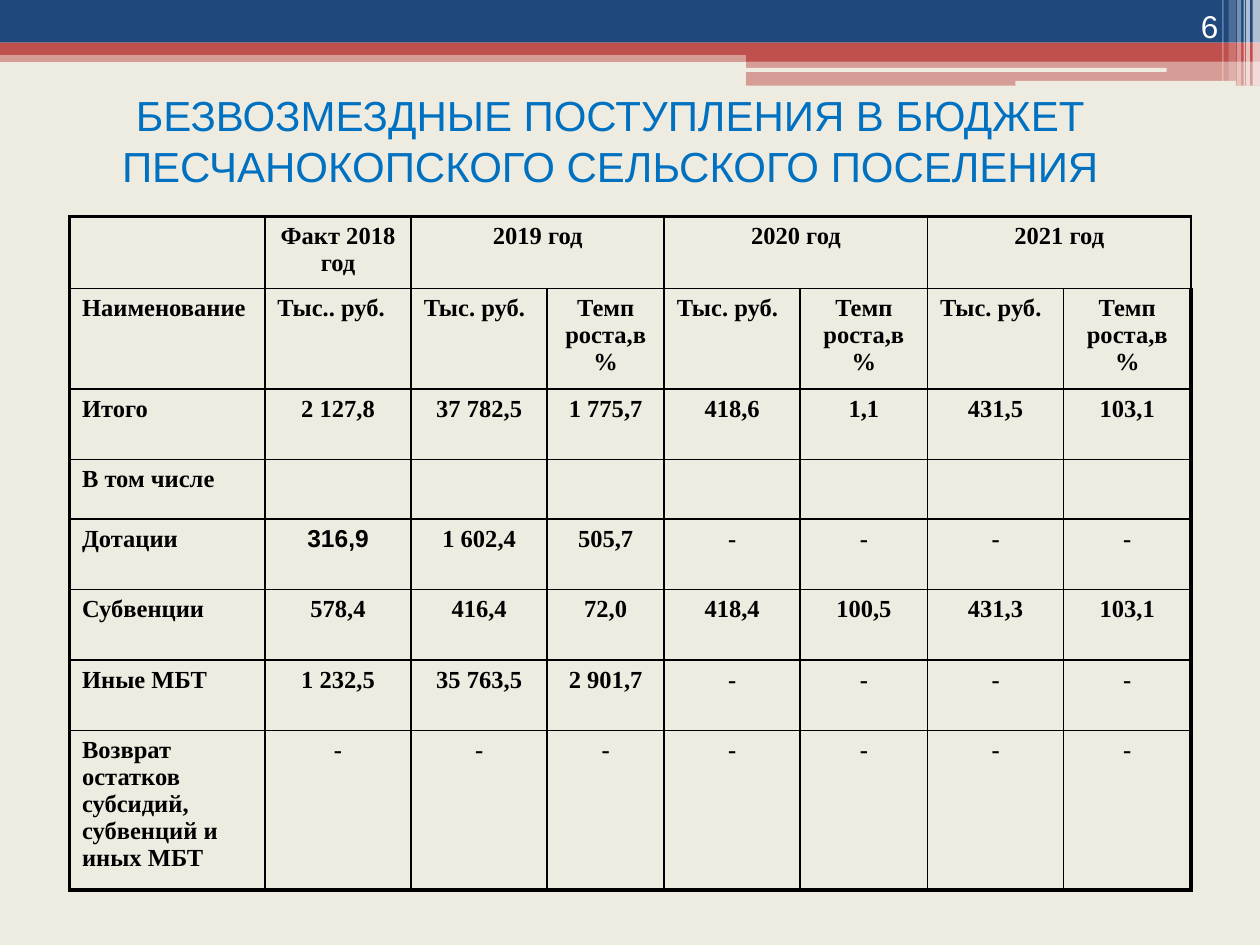
import pptx
import pptx.util
import pptx.dml.color
import pptx.enum.shapes
import pptx.enum.text
import pptx.oxml
import pptx.oxml.ns

Cm = pptx.util.Cm
Align = pptx.enum.text.PP_ALIGN
Anchor = pptx.enum.text.MSO_ANCHOR
Kind = pptx.enum.shapes.MSO_SHAPE

PAPER, NAVY, RED, WHITE, BLACK = "EEECE1", "1F497D", "C0504D", "FFFFFF", "000000"
THIN, THICK = 1, 2.25

BARS = [
    (0, 1.02, 25.4, 0.23, RED, 50),
    (0, 0, 25.4, 0.86, NAVY, 100),
    (0, 0.86, 25.4, 0.25, RED, 100),
    (15.04, 0.99, 10.36, 0.25, RED, 100),
    (15.04, 1.22, 10.36, 0.51, RED, 50),
]
SLOTS = [
    (15.01, 1.37, 8.51, 0.08, PAPER, 100),
    (20.47, 1.63, 4.45, 0.1, PAPER, 100),
]
STRIPES = [
    (25.25, 0, 0.15, 1.73, WHITE, 65),
    (25.12, 0, 0.08, 1.73, WHITE, 65),
    (25.07, 0, 0.03, 1.73, WHITE, 60),
    (24.94, 0, 0.08, 1.73, WHITE, 40),
    (24.77, 0, 0.15, 1.63, WHITE, 20),
    (24.64, 0, 0.03, 1.63, WHITE, 30),
]

COLS = [3.94, 2.95, 2.74, 2.36, 2.74, 2.57, 2.74, 2.57]
ROWS = [1.42, 1.88, 1.42, 1.2, 1.42, 1.42, 1.42, 2.98]
UNIT, RATE = "Тыс. руб.", "Темп роста,в %"
DATA = [
    ["", "Факт 2018 год", "2019 год", "", "2020 год", "", "2021 год", ""],
    ["Наименование", "Тыс.. руб."] + [UNIT, RATE] * 3,
    ["Итого", "2 127,8", "37 782,5", "1 775,7", "418,6", "1,1", "431,5", "103,1"],
    ["В том числе"] + [""] * 7,
    ["Дотации", "316,9", "1 602,4", "505,7"] + ["-"] * 4,
    ["Субвенции", "578,4", "416,4", "72,0", "418,4", "100,5", "431,3", "103,1"],
    ["Иные МБТ", "1 232,5", "35 763,5", "2 901,7"] + ["-"] * 4,
    ["Возврат остатков субсидий, субвенций и иных МБТ"] + ["-"] * 7,
]


def color(target, code):
    target.rgb = pptx.dml.color.RGBColor.from_string(code)


def paint(fill, code, alpha=100):
    fill.solid()
    color(fill.fore_color, code)
    if alpha < 100:
        tint = fill.fore_color._xFill.find(".//" + pptx.oxml.ns.qn("a:srgbClr"))
        tint.append(pptx.oxml.parse_xml(
            f'<a:alpha {pptx.oxml.ns.nsdecls("a")} val="{alpha * 1000}"/>'))


def write(para, text, align, code, form):
    para.alignment = align
    run = para.add_run()
    run.text = text
    for name, value in form.items():
        setattr(run.font, name, value)
    color(run.font.color, code)


def banner(slide, box):
    left, top = box[:2]
    for kind, parts in ((Kind.RECTANGLE, BARS), (Kind.ROUNDED_RECTANGLE, SLOTS),
                        (Kind.RECTANGLE, STRIPES)):
        for x, y, wide, high, code, alpha in parts:
            shape = slide.shapes.add_shape(
                kind, Cm(left + x), Cm(top + y), Cm(wide), Cm(high))
            shape.shadow.inherit = False
            shape.line.fill.background()
            paint(shape.fill, code, alpha)


def label(slide, box, text, anchor, align, code, size):
    frame = slide.shapes.add_textbox(*map(Cm, box)).text_frame
    for name, value in {"word_wrap": True, "vertical_anchor": anchor}.items():
        setattr(frame, name, value)
    write(frame.paragraphs[0], text, align, code,
          {"name": "Arial", "size": pptx.util.Pt(size)})


def border(cell, row, col):
    edges = {"L": col == 0, "R": col == len(COLS) - 1,
             "T": row == 0, "B": row == len(ROWS) - 1}
    for side, outer in edges.items():
        width = pptx.util.Pt(THICK if outer else THIN)
        cell._tc.get_or_add_tcPr().append(pptx.oxml.parse_xml(
            f'<a:ln{side} {pptx.oxml.ns.nsdecls("a")} w="{width}"><a:solidFill>'
            f'<a:srgbClr val="{BLACK}"/></a:solidFill></a:ln{side}>'))


def budget(slide, box):
    table = slide.shapes.add_table(len(ROWS), len(COLS), *map(Cm, box)).table
    for name in ("first_row", "horz_banding"):
        setattr(table, name, False)
    for part, wide in zip(table.columns, COLS):
        part.width = Cm(wide)
    for part, high in zip(table.rows, ROWS):
        part.height = Cm(high)
    for col in (2, 4, 6):
        table.cell(0, col).merge(table.cell(0, col + 1))
    for row, line in enumerate(DATA):
        for col, text in enumerate(line):
            cell = table.cell(row, col)
            border(cell, row, col)
            cell.fill.background()
            if text:
                plain = col == 0 or text.startswith("Тыс")
                face = "Arial" if text == "316,9" else "Times New Roman"
                write(cell.text_frame.paragraphs[0], text,
                      Align.LEFT if plain else Align.CENTER, BLACK,
                      {"name": face, "size": pptx.util.Pt(14), "bold": True})


def main():
    deck = pptx.Presentation()
    for name, value in {"slide_width": 25.4, "slide_height": 19.05}.items():
        setattr(deck, name, Cm(value))
    slide = deck.slides.add_slide(deck.slide_layouts[6])
    paint(slide.background.fill, PAPER)
    banner(slide, (0, 0, 25.4, 1.73))
    label(slide, (0, 1.93, 24.61, 1.8),
          "БЕЗВОЗМЕЗДНЫЕ ПОСТУПЛЕНИЯ В БЮДЖЕТ ПЕСЧАНОКОПСКОГО СЕЛЬСКОГО ПОСЕЛЕНИЯ",
          Anchor.MIDDLE, Align.CENTER, "0070C0", 24)
    label(slide, (22.71, 0, 2.1, 1.02), "6", Anchor.BOTTOM, Align.RIGHT, WHITE, 18)
    budget(slide, (1.4, 4.37, sum(COLS), sum(ROWS)))
    deck.save("out.pptx")


if __name__ == "__main__":
    main()
